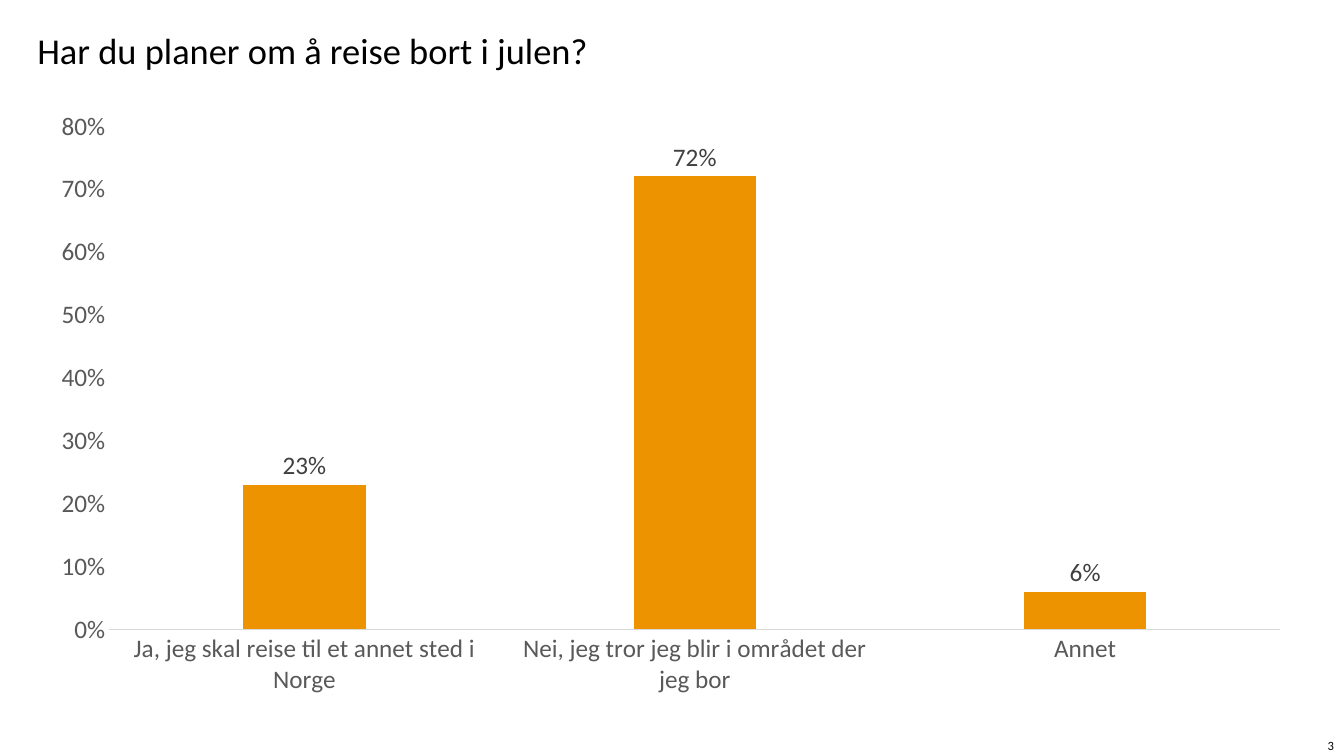
"""Build a slide with a column chart of Christmas travel plans."""
from dataclasses import dataclass

import pptx
import pptx.chart.data
import pptx.dml.color
import pptx.enum.chart
import pptx.enum.text
import pptx.util

EMU_PER_PX = 9144
FONT = "Calibri"
CHART_SIZE = 18
ANSWERS = {
    "Ja, jeg skal reise til et annet sted i Norge": 0.23,
    "Nei, jeg tror jeg blir i området der jeg bor": 0.72,
    "Annet": 0.06,
}


@dataclass(frozen=True)
class Label:
    text: str
    left: int
    top: int
    width: int
    height: int
    size: int
    inset_x: int
    inset_y: int
    align: pptx.enum.text.PP_ALIGN
    anchor: pptx.enum.text.MSO_ANCHOR


LABELS = (
    Label("Har du planer om å reise bort i julen?", 37, 28, 1158, 51, 26, 0, 0,
          pptx.enum.text.PP_ALIGN.LEFT, pptx.enum.text.MSO_ANCHOR.TOP),
    Label("3", 1295, 729, 38, 21, 9, 10, 5,
          pptx.enum.text.PP_ALIGN.RIGHT, pptx.enum.text.MSO_ANCHOR.MIDDLE),
)


def px(length: int) -> pptx.util.Emu:
    return pptx.util.Emu(length * EMU_PER_PX)


def color(value: str) -> pptx.dml.color.RGBColor:
    return pptx.dml.color.RGBColor.from_string(value)


def style_font(font, size: int, value: str) -> None:
    font.name = FONT
    font.size = pptx.util.Pt(size)
    font.bold = False
    font.color.rgb = color(value)


def add_label(page, label: Label) -> None:
    box = page.shapes.add_textbox(
        px(label.left), px(label.top), px(label.width), px(label.height))
    frame = box.text_frame
    frame.word_wrap = True
    frame.vertical_anchor = label.anchor
    frame.margin_left = frame.margin_right = px(label.inset_x)
    frame.margin_top = frame.margin_bottom = px(label.inset_y)
    frame.text = label.text
    para = frame.paragraphs[0]
    para.alignment = label.align
    for span in para.runs:
        style_font(span.font, label.size, "000000")


def style_axis(axis) -> None:
    axis.has_major_gridlines = False
    axis.major_tick_mark = pptx.enum.chart.XL_TICK_MARK.NONE
    axis.minor_tick_mark = pptx.enum.chart.XL_TICK_MARK.NONE
    style_font(axis.tick_labels.font, CHART_SIZE, "595959")


def add_answer_chart(page) -> None:
    data = pptx.chart.data.CategoryChartData(number_format="0%")
    data.categories = list(ANSWERS)
    data.add_series("Series 1", list(ANSWERS.values()))
    chart = page.shapes.add_chart(
        pptx.enum.chart.XL_CHART_TYPE.COLUMN_CLUSTERED,
        px(36), px(98), px(1259), px(603), data).chart
    chart.has_title = False
    chart.has_legend = False
    style_font(chart.font, CHART_SIZE, "000000")

    answers, shares = chart.category_axis, chart.value_axis
    for axis in (answers, shares):
        style_axis(axis)
    answers.format.line.color.rgb = color("D9D9D9")
    answers.format.line.width = pptx.util.Pt(0.75)
    shares.format.line.fill.background()
    shares.minimum_scale = 0
    shares.maximum_scale = 0.8
    shares.major_unit = 0.1
    shares.tick_labels.number_format = "0%"
    shares.tick_labels.number_format_is_linked = False

    plot = chart.plots[0]
    plot.vary_by_categories = False
    plot.gap_width = 219
    plot.overlap = -27
    columns = plot.series[0]
    columns.format.fill.solid()
    columns.format.fill.fore_color.rgb = color("ED9300")
    labels = columns.data_labels
    labels.show_value = True
    labels.number_format = "0%"
    labels.number_format_is_linked = False
    labels.position = pptx.enum.chart.XL_LABEL_POSITION.OUTSIDE_END
    style_font(labels.font, CHART_SIZE, "404040")


def main() -> None:
    deck = pptx.Presentation()
    deck.slide_width = px(1333)
    deck.slide_height = px(750)
    page = deck.slides.add_slide(deck.slide_layouts[6])
    for label in LABELS:
        add_label(page, label)
    add_answer_chart(page)
    deck.save("out.pptx")


if __name__ == "__main__":
    main()
